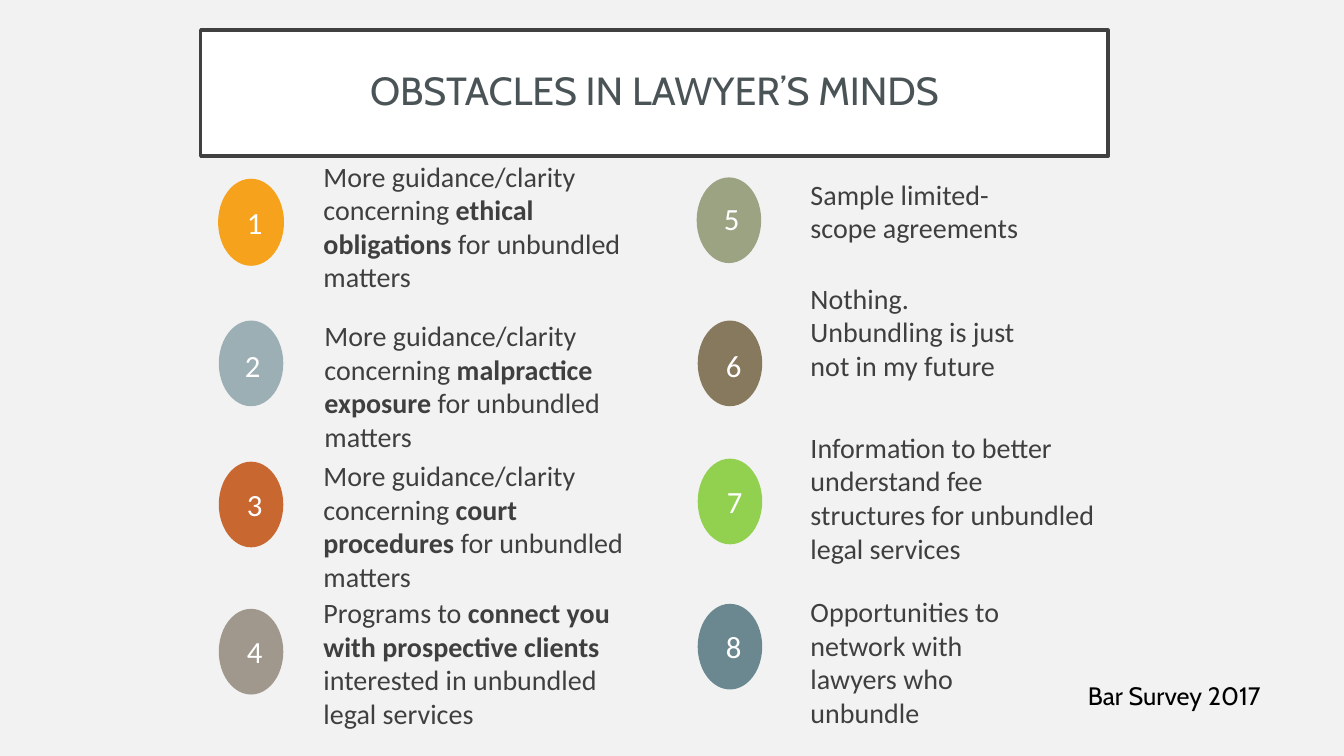
from dataclasses import dataclass

from pptx import Presentation
from pptx.dml.color import RGBColor
from pptx.enum.shapes import MSO_SHAPE
from pptx.enum.text import MSO_ANCHOR, MSO_AUTO_SIZE, PP_ALIGN
from pptx.util import Inches, Pt

OVAL = MSO_SHAPE.OVAL
MIDDLE = MSO_ANCHOR.MIDDLE
CENTER = PP_ALIGN.CENTER
NO_AUTOFIT = MSO_AUTO_SIZE.NONE

TITLE_FONT = "Cabin"
BODY_FONT = "Calibri"
OVAL_WIDTH, OVAL_HEIGHT = 0.64, 0.85
NUMBER_WIDTH, NUMBER_HEIGHT = 0.38, 0.47
TEXT_HEIGHT = 1.3
GUIDANCE = "More guidance/clarity concerning "
MATTERS = "for unbundled matters"


@dataclass
class Obstacle:
    fill: str
    oval: tuple[float, float]
    number: tuple[float, float]
    text: tuple[float, float]
    text_width: float
    lead: str
    bold: str = ""
    tail: str = ""


OBSTACLES = [
    Obstacle("F6A21D", (2.17, 1.78), (2.35, 1.97), (3.11, 1.53), 3.49,
             GUIDANCE, "ethical obligations ", MATTERS),
    Obstacle("9BAFB5", (2.17, 3.18), (2.33, 3.39), (3.12, 3.11), 3.37,
             GUIDANCE, "malpractice exposure ", MATTERS),
    Obstacle("C96731", (2.17, 4.58), (2.35, 4.77), (3.11, 4.5), 3.38,
             GUIDANCE, "court procedures ", MATTERS),
    Obstacle("A0988C", (2.17, 6.04), (2.35, 6.23), (3.11, 5.86), 3.38,
             "Programs to ", "connect you with prospective clients ",
             "interested in unbundled legal services"),
    Obstacle("9CA383", (6.91, 1.76), (7.08, 1.93), (7.94, 1.71), 2.42,
             "Sample limited-scope agreements"),
    Obstacle("87795D", (6.92, 3.18), (7.1, 3.39), (7.94, 2.74), 2.42,
             "Nothing. Unbundling is just not in my future"),
    Obstacle("92D050", (6.92, 4.55), (7.11, 4.74), (7.94, 4.22), 3.05,
             "Information to better understand fee structures "
             "for unbundled legal services"),
    Obstacle("6B8890", (6.92, 5.99), (7.1, 6.18), (7.94, 5.85), 2.42,
             "Opportunities to network with lawyers who unbundle"),
]


def color(hex_value: str) -> RGBColor:
    return RGBColor.from_string(hex_value)


def style_font(para, name: str, size: float, hex_value: str) -> None:
    para.font.name = name
    para.font.size = Pt(size)
    para.font.color.rgb = color(hex_value)


def add_text(page, position: tuple[float, float], width: float, height: float,
             spans: list[tuple[str, bool]], font: str, size: float,
             hex_value: str) -> None:
    """Add a wrapping text box; each span is its text and whether it is bold."""
    left, top = position
    box = page.shapes.add_textbox(
        Inches(left), Inches(top), Inches(width), Inches(height))
    box.text_frame.word_wrap = True
    para = box.text_frame.paragraphs[0]
    style_font(para, font, size, hex_value)
    for text, bold in spans:
        span = para.add_run()
        span.text = text
        if bold:
            span.font.bold = True


def add_obstacle(page, number: int, item: Obstacle) -> None:
    left, top = item.oval
    oval = page.shapes.add_shape(
        OVAL, Inches(left), Inches(top), Inches(OVAL_WIDTH), Inches(OVAL_HEIGHT))
    oval.shadow.inherit = False
    oval.fill.solid()
    oval.fill.fore_color.rgb = color(item.fill)
    if number == 1:
        oval.line.color.rgb = color(item.fill)
        oval.line.width = Pt(1)
    else:
        oval.line.fill.background()
    add_text(page, item.number, NUMBER_WIDTH, NUMBER_HEIGHT,
             [(str(number), False)], BODY_FONT, 22, "FFFFFF")
    parts = [(item.lead, False), (item.bold, True), (item.tail, False)]
    add_text(page, item.text, item.text_width, TEXT_HEIGHT,
             [part for part in parts if part[0]], BODY_FONT, 20, "3F3F3F")


def format_title(title) -> None:
    title.left, title.top = Inches(1.99), Inches(0.3)
    title.width, title.height = Inches(9), Inches(1.25)
    title.fill.solid()
    title.fill.fore_color.rgb = color("FFFFFF")
    title.line.color.rgb = color("404040")
    title.line.width = Pt(2.5)
    frame = title.text_frame
    frame.text = "OBSTACLES IN LAWYER’S MINDS"
    frame.auto_size = NO_AUTOFIT
    frame.word_wrap = True
    frame.vertical_anchor = MIDDLE
    frame.margin_left = frame.margin_right = Inches(0.2)
    frame.margin_top = frame.margin_bottom = Inches(0.2)
    para = frame.paragraphs[0]
    para.alignment = CENTER
    para.line_spacing = 0.9
    style_font(para, TITLE_FONT, 28, "4A5356")


def main() -> None:
    deck = Presentation()
    deck.slide_width, deck.slide_height = Inches(13.33), Inches(7.5)
    page = deck.slides.add_slide(deck.slide_layouts[5])
    page.background.fill.solid()
    page.background.fill.fore_color.rgb = color("F2F2F2")
    format_title(page.shapes.title)
    for number, item in enumerate(OBSTACLES, start=1):
        add_obstacle(page, number, item)
    add_text(page, (10.69, 6.7), 2.11, 0.4, [("Bar Survey 2017", False)],
             TITLE_FONT, 18, "000000")
    deck.save("out.pptx")


if __name__ == "__main__":
    main()
